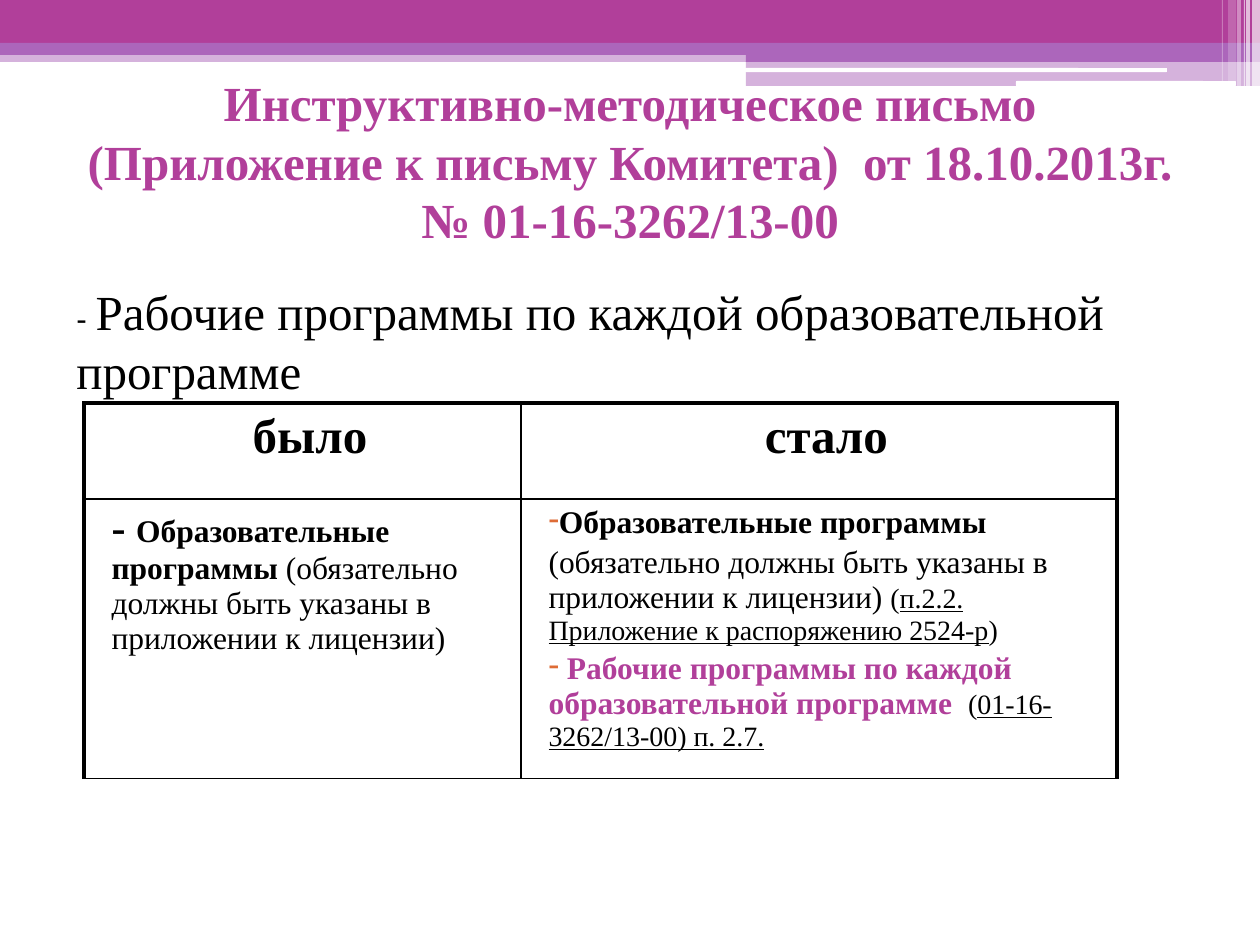
from lxml import etree
from pptx import Presentation
from pptx import util as u
from pptx.dml.color import RGBColor
from pptx.enum import shapes, text
from pptx.oxml import ns

PX = 914400 / 126
PURPLE = RGBColor(0xB1, 0x3F, 0x9A)
VIOLET = RGBColor(0xAC, 0x66, 0xBB)
ORANGE = RGBColor(0xDE, 0x6C, 0x36)
WHITE = RGBColor(0xFF, 0xFF, 0xFF)
BLACK = RGBColor(0, 0, 0)
SERIF = "Times New Roman"


def px(*lengths):
    """Turn pixels into EMU."""
    return [u.Emu(round(length * PX)) for length in lengths]


def add_span(para, words, size=18, font=SERIF, color=BLACK, bold=False, underline=False):
    span = para.add_run()
    span.text = words
    span.font.size = u.Pt(size)
    span.font.name = font
    span.font.color.rgb = color
    span.font.bold = bold
    span.font.underline = underline


deck = Presentation()
deck.slide_width, deck.slide_height = px(1260, 945)
page = deck.slides.add_slide(deck.slide_layouts[5])

# Header band: left, top, width, height, colour, opacity in percent
RECT = shapes.MSO_SHAPE.RECTANGLE
ROUND = shapes.MSO_SHAPE.ROUNDED_RECTANGLE
bars = [
    (RECT, 0, 50, 1260, 12, VIOLET, 50),
    (RECT, 0, 0, 1260, 43, PURPLE, 100),
    (RECT, 0, 43, 1260, 12, VIOLET, 100),
    (RECT, 746, 49, 514, 13, VIOLET, 100),
    (RECT, 746, 61, 514, 25, VIOLET, 50),
    (ROUND, 745, 68, 422, 4, WHITE, 100),
    (ROUND, 1016, 81, 220, 5, WHITE, 100),
    (RECT, 1252, 0, 8, 86, WHITE, 65),
    (RECT, 1246, 0, 4, 86, WHITE, 65),
    (RECT, 1244, 0, 1, 86, WHITE, 60),
    (RECT, 1237, 0, 4, 86, WHITE, 40),
    (RECT, 1228, 0, 8, 81, WHITE, 20),
    (RECT, 1222, 0, 1, 81, WHITE, 30),
]
for preset, left, top, width, height, color, opacity in bars:
    bar = page.shapes.add_shape(preset, *px(left, top, width, height))
    bar.shadow.inherit = False
    bar.line.fill.background()
    bar.fill.solid()
    bar.fill.fore_color.rgb = color
    if opacity < 100:
        shade = bar.fill._xPr.find(".//" + ns.qn("a:srgbClr"))
        etree.SubElement(shade, ns.qn("a:alpha"), val=str(opacity * 1000))

# Title, brought in front of the header band
title = page.shapes.title
page.shapes._spTree.append(title._element)
title.left, title.top, title.width, title.height = px(74, 66, 1112, 189)
title.text_frame.word_wrap = True
title.text_frame.vertical_anchor = text.MSO_ANCHOR.TOP
title.text_frame.auto_size = text.MSO_AUTO_SIZE.NONE
para = title.text_frame.paragraphs[0]
para.alignment = text.PP_ALIGN.CENTER
add_span(para, "Инструктивно-методическое письмо (Приложение к письму Комитета)  "
         "от 18.10.2013г. № 01-16-3262/13-00", size=28, color=PURPLE, bold=True)

box = page.shapes.add_textbox(*px(64, 275, 1171, 131))
box.text_frame.word_wrap = True
para = box.text_frame.paragraphs[0]
add_span(para, "- ", font="Arial")
add_span(para, "Рабочие программы по каждой образовательной программе", size=28)

# Comparison table: rows of cells, cells of paragraphs, paragraphs of (words, format)
BOLD = {"bold": True}
HEAD = {"size": 28, "bold": True}
NOTE = {"size": 16}
LINK = {"size": 16, "underline": True}
REQUIRED = "(обязательно должны быть указаны в приложении к лицензии)"
rows = [
    [[[("было", HEAD)]], [[("стало", HEAD)]]],
    [
        [[("- ", {"size": 24, "bold": True}), ("Образовательные программы ", BOLD),
          (REQUIRED, {})]],
        [
            [("Образовательные программы", BOLD)],
            [(REQUIRED + " ", {}), ("(", NOTE),
             ("п.2.2. Приложение к распоряжению 2524-р", LINK), (")", NOTE)],
            [(" ", BOLD),
             ("Рабочие программы по каждой образовательной программе  ",
              {"bold": True, "color": PURPLE}),
             ("(", NOTE), ("01-16-3262/13-00) п. 2.7.", LINK)],
        ],
    ],
]
bulleted = {(1, 1, 0), (1, 1, 2)}  # row, column, paragraph

frame = page.shapes.add_table(2, 2, *px(84, 403, 1033, 374))
table = frame.table
table.first_row = table.horz_banding = False
for column, width in zip(table.columns, px(437, 596)):
    column.width = width
for row, height in zip(table.rows, px(96, 278)):
    row.height = height

for r, row in enumerate(rows):
    for c, paragraphs in enumerate(row):
        cell = table.cell(r, c)
        cell.fill.background()
        for p, spans in enumerate(paragraphs):
            para = cell.text_frame.paragraphs[0] if p == 0 else cell.text_frame.add_paragraph()
            para.alignment = text.PP_ALIGN.CENTER if r == 0 else text.PP_ALIGN.LEFT
            para.space_before = u.Pt(3)
            props = para._p.get_or_add_pPr()
            props.set("marL", str(px(15)[0]))
            props.set("indent", "0")
            if (r, c, p) in bulleted:
                tint = etree.SubElement(props, ns.qn("a:buClr"))
                etree.SubElement(tint, ns.qn("a:srgbClr"), val=str(ORANGE))
                etree.SubElement(props, ns.qn("a:buChar"), char="-")
            for words, style in spans:
                add_span(para, words, **style)

        # Heavy frame on the left, right and top; thin lines elsewhere
        heavy = {"L": c == 0, "R": c == 1, "T": r == 0, "B": False}
        for place, (side, is_heavy) in enumerate(heavy.items()):
            edge = etree.Element(ns.qn("a:ln" + side), w=str(u.Pt(2.25 if is_heavy else 1)))
            fill = etree.SubElement(edge, ns.qn("a:solidFill"))
            etree.SubElement(fill, ns.qn("a:srgbClr"), val=str(BLACK))
            cell._tc.get_or_add_tcPr().insert(place, edge)

deck.save("out.pptx")
